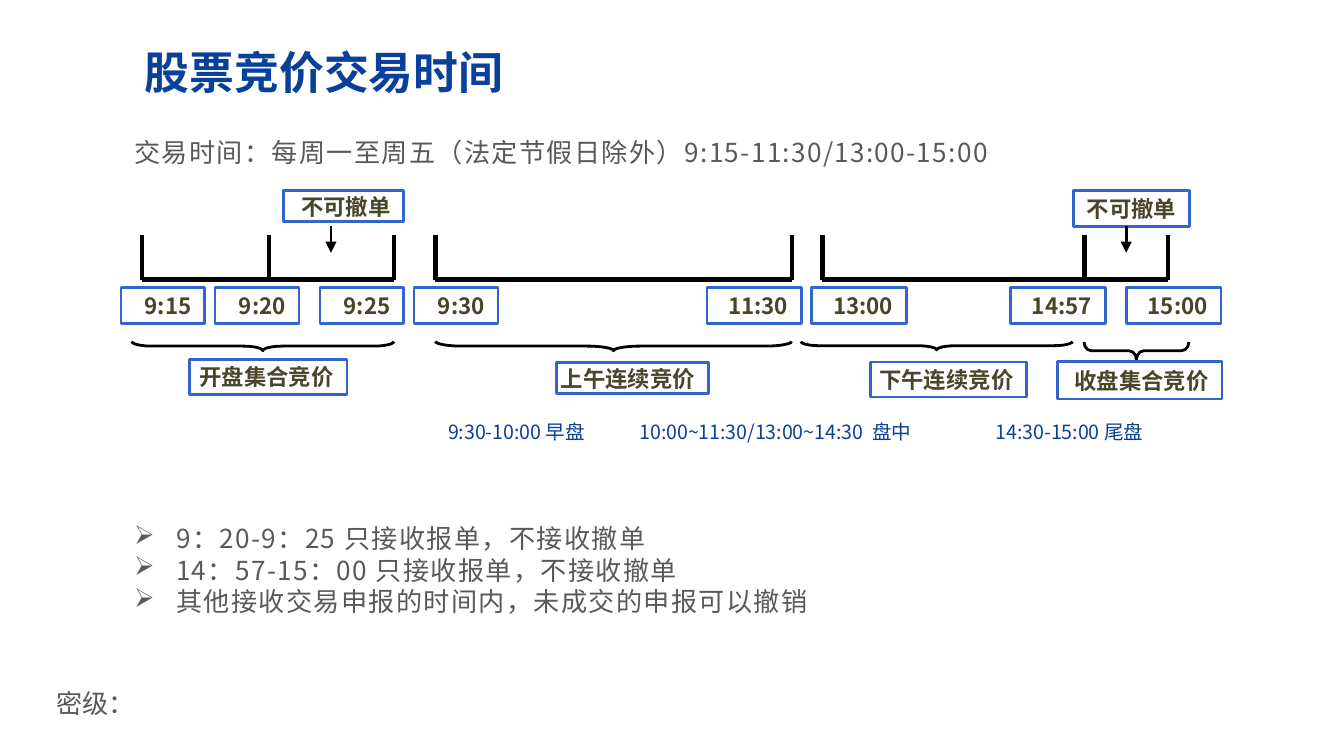
import pptx
import pptx.dml.color
import pptx.enum.shapes
import pptx.enum.text
import pptx.oxml
import pptx.oxml.ns
import pptx.util

Pt = pptx.util.Pt
SHAPE = pptx.enum.shapes.MSO_SHAPE
ALIGN = pptx.enum.text.PP_ALIGN
ANCHOR = pptx.enum.text.MSO_ANCHOR

FONT = "Noto Sans CJK SC"
COLORS = {"title": "08409C", "body": "595959", "label": "4A452A",
          "border": "3366CC", "line": "000000"}


def rgb(name):
    return pptx.dml.color.RGBColor.from_string(COLORS[name])


def add_xml(parent, tag, **attrs):
    child = pptx.oxml.parse_xml(f"<a:{tag} {pptx.oxml.ns.nsdecls('a')}/>")
    for key, value in attrs.items():
        child.set(key, value)
    parent.append(child)


def write(tf, text, size=14, color="body", bold=False, align=ALIGN.LEFT,
          anchor=ANCHOR.TOP, margins=(7.2, 3.6, 7.2, 3.6), spacing=0, bullet=None):
    """Fill a text frame, one paragraph for each line of text."""
    tf.word_wrap = True
    tf.vertical_anchor = anchor
    tf.margin_left, tf.margin_top, tf.margin_right, tf.margin_bottom = map(Pt, margins)
    for i, line in enumerate(text.split("\n")):
        p = tf.add_paragraph() if i else tf.paragraphs[0]
        p.alignment = align
        p.line_spacing = Pt(1.2 * size)
        if bullet:
            pPr = p._p.get_or_add_pPr()
            pPr.set("marL", str(Pt(22.5)))
            pPr.set("indent", str(-Pt(22.5)))
            add_xml(pPr, "buChar", char=bullet)
        r = p.add_run()
        r.text = line
        r.font.size, r.font.bold, r.font.name = Pt(size), bold, FONT
        r.font.color.rgb = rgb(color)
        rPr = r._r.get_or_add_rPr()
        add_xml(rPr, "ea", typeface=FONT)
        if spacing:
            rPr.set("spc", str(round(spacing * 100)))


class Board:
    """Holds the slide and draws each kind of element in its style."""

    def __init__(self, slide):
        self.shapes = slide.shapes

    def text(self, x, y, w, h, text, **style):
        box = self.shapes.add_textbox(Pt(x), Pt(y), Pt(w), Pt(h))
        write(box.text_frame, text, **style)

    def outline(self, kind, x, y, w, h, color):
        sp = self.shapes.add_shape(kind, Pt(x), Pt(y), Pt(w), Pt(h))
        sp.shadow.inherit = False
        sp.fill.background()
        sp.line.color.rgb = rgb(color)
        sp.line.width = Pt(1.5)
        return sp

    def label(self, x, y, w, h, text):
        sp = self.outline(SHAPE.RECTANGLE, x, y, w, h, "border")
        write(sp.text_frame, text, size=12, color="label", bold=True,
              align=ALIGN.RIGHT, anchor=ANCHOR.MIDDLE, margins=(0, 0, 7.2, 0))

    def line(self, x1, y1, x2, y2, width=2.25, arrow=False):
        line = self.shapes.add_connector(pptx.enum.shapes.MSO_CONNECTOR.STRAIGHT,
                                         Pt(x1), Pt(y1), Pt(x2), Pt(y2))
        line.line.color.rgb = rgb("line")
        line.line.width = Pt(width)
        if arrow:
            add_xml(line.line._get_or_add_ln(), "tailEnd", type="triangle")
        add_xml(line._element.spPr, "effectLst")

    def brace(self, cx, cy, length, depth, curve):
        """Draw a brace that points down, centred on (cx, cy)."""
        sp = self.outline(SHAPE.LEFT_BRACE, cx - depth / 2, cy - length / 2,
                          depth, length, "line")
        sp.rotation = 270
        sp.adjustments[0] = curve / depth
        sp.adjustments[1] = 0.5


def main():
    prs = pptx.Presentation()
    prs.slide_width, prs.slide_height = Pt(720), Pt(405)
    s = Board(prs.slides.add_slide(prs.slide_layouts[6]))

    s.text(25.2, 365, 65.5, 22.3, "密级：", margins=(5, 3, 5, 3))
    s.text(70.6, 18.7, 436.3, 39.6, "股票竞价交易时间", size=24, color="title",
           bold=True, anchor=ANCHOR.MIDDLE)
    s.text(64.8, 69.8, 501.8, 24.5,
           "交易时间：每周一至周五（法定节假日除外）9:15-11:30/13:00-15:00", spacing=0.7)

    axis_top, axis_y = 126, 149.8
    for ticks in [(76.3, 144, 211), (233.3, 424.1), (440.6, 581, 625.7)]:
        s.line(ticks[0], axis_y, ticks[-1], axis_y)
        for x in ticks:
            s.line(x, axis_top, x, axis_y)

    for x, time in [(64.8, "9:15"), (115.2, "9:20"), (171.4, "9:25"), (221.8, "9:30"),
                    (378.7, "11:30"), (434.9, "13:00"), (541.4, "14:57"), (603.4, "15:00")]:
        s.label(x, 154.2, 45 if len(time) == 4 else 50.7, 19, time)

    for x, w, h, arrow_x in [(152, 64.4, 16.7, 177.3), (575.3, 62, 19.4, 603.3)]:
        s.label(x, 102.2, w, h, "不可撤单")
        s.line(arrow_x, 121.2, arrow_x, 135.4, width=1.5, arrow=True)

    for brace in [(140.8, 185.4, 140.4, 5, 10.6), (328.7, 185.4, 190.8, 5, 14.4),
                  (501.8, 185.2, 145.4, 4.5, 10), (608.8, 187.9, 56.2, 9.4, 4)]:
        s.brace(*brace)

    for x, y, w, h, phase in [(101.5, 192.4, 84.4, 18.9, "开盘集合竞价"),
                              (298, 194.3, 81.5, 16.7, "上午连续竞价"),
                              (466.4, 194, 83.7, 18.7, "下午连续竞价"),
                              (566.7, 193.5, 88, 20.3, "收盘集合竞价")]:
        s.label(x, y, w, h, phase)

    for x, w, period in [(233, 114.5, "9:30-10:00 早盘"),
                         (335.5, 195.8, "10:00~11:30/13:00~14:30  盘中"),
                         (526.3, 114.5, "14:30-15:00 尾盘")]:
        s.text(x, 221.3, w, 20.9, period, size=10.5, color="title")

    s.text(64.8, 276.5, 501.8, 58.3,
           "9：20-9：25 只接收报单，不接收撤单\n"
           "14：57-15：00 只接收报单，不接收撤单\n"
           "其他接收交易申报的时间内，未成交的申报可以撤销", spacing=0.7, bullet="➢")

    prs.save("out.pptx")


if __name__ == "__main__":
    main()
